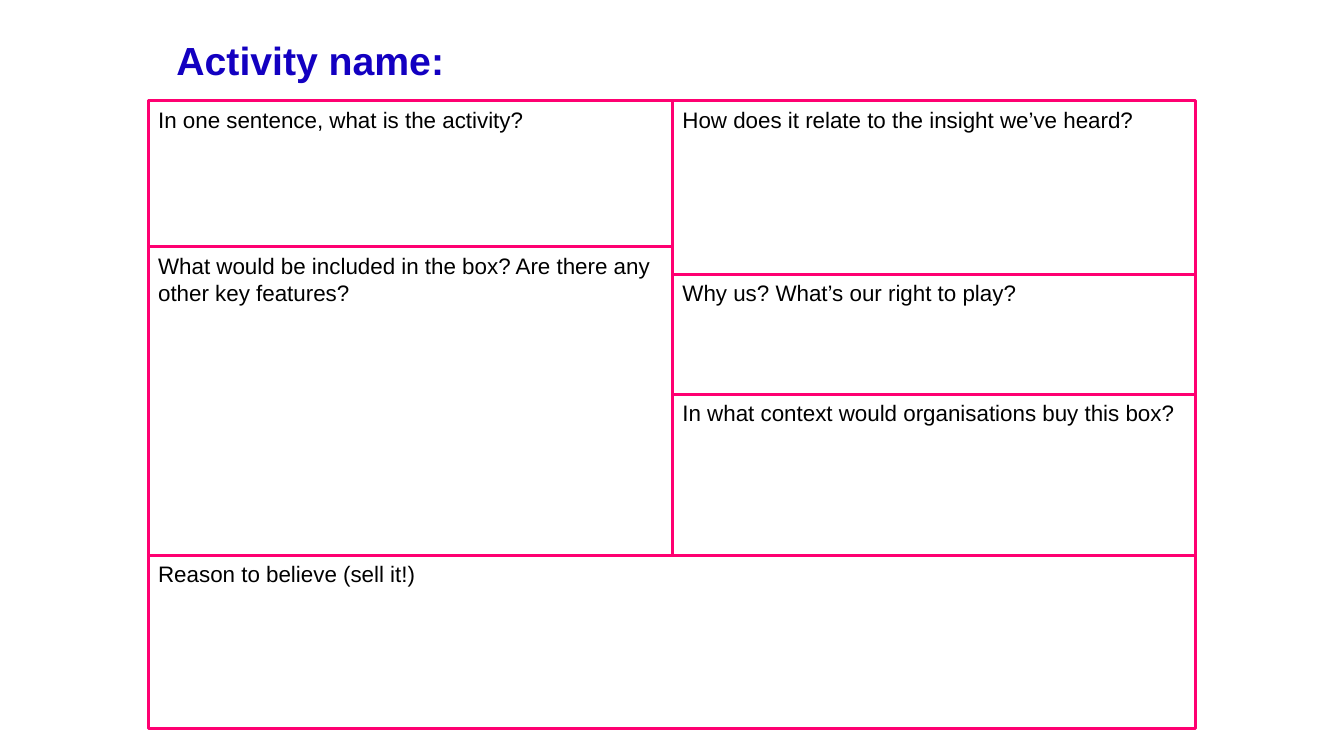
from pptx import Presentation
from pptx.dml.color import RGBColor as Rgb
from pptx.enum.shapes import MSO_SHAPE as Shape
from pptx.enum.text import MSO_ANCHOR as Anchor, PP_ALIGN as Align
from pptx.util import Inches, Pt

HUES = {"title": "1300C1", "edge": "FF0071", "text": "000000"}
FONT = "Arial"
COLS = [1.47, 6.67, 11.86]
ROWS = [1, 2.45, 2.72, 3.91, 5.51, 7.23]

# Prompt, then its first and last column line, first and last row line
BOXES = [
    ("In one sentence, what is the activity?", 0, 1, 0, 1),
    ("What would be included in the box? Are there any other key features?",
     0, 1, 1, 4),
    ("How does it relate to the insight we’ve heard?", 1, 2, 0, 2),
    ("Why us? What’s our right to play?", 1, 2, 2, 3),
    ("In what context would organisations buy this box?", 1, 2, 3, 4),
    ("Reason to believe (sell it!)", 0, 2, 4, 5),
]


def write(frame, text, size, hue, anchor, bold=False):
    frame.text = text
    frame.word_wrap = True
    frame.vertical_anchor = anchor
    para = frame.paragraphs[0]
    para.alignment = Align.LEFT
    font = para.runs[0].font
    font.name, font.size, font.bold = FONT, Pt(size), bold
    font.color.rgb = Rgb.from_string(HUES[hue])


def add_title(slide, text):
    title = slide.shapes.title
    title.left, title.top = Inches(1.65), Inches(0.15)
    title.width, title.height = Inches(9.63), Inches(0.73)
    write(title.text_frame, text, 28, "title", Anchor.BOTTOM, True)
    title.text_frame.paragraphs[0].line_spacing = 0.9


def add_box(slide, text, left, right, top, foot):
    """Draw an outlined box between the given grid lines."""
    x, y = COLS[left], ROWS[top]
    box = slide.shapes.add_shape(
        Shape.RECTANGLE, Inches(x), Inches(y),
        Inches(COLS[right] - x), Inches(ROWS[foot] - y))
    box.shadow.inherit = False
    box.fill.background()
    box.line.color.rgb = Rgb.from_string(HUES["edge"])
    box.line.width = Pt(2.25)
    write(box.text_frame, text, 16, "text", Anchor.TOP)


def main():
    deck = Presentation()
    deck.slide_width, deck.slide_height = Inches(13.33), Inches(7.5)
    slide = deck.slides.add_slide(deck.slide_layouts.get_by_name("Title Only"))
    add_title(slide, "Activity name:")
    for box in BOXES:
        add_box(slide, *box)
    deck.save("out.pptx")


if __name__ == "__main__":
    main()
